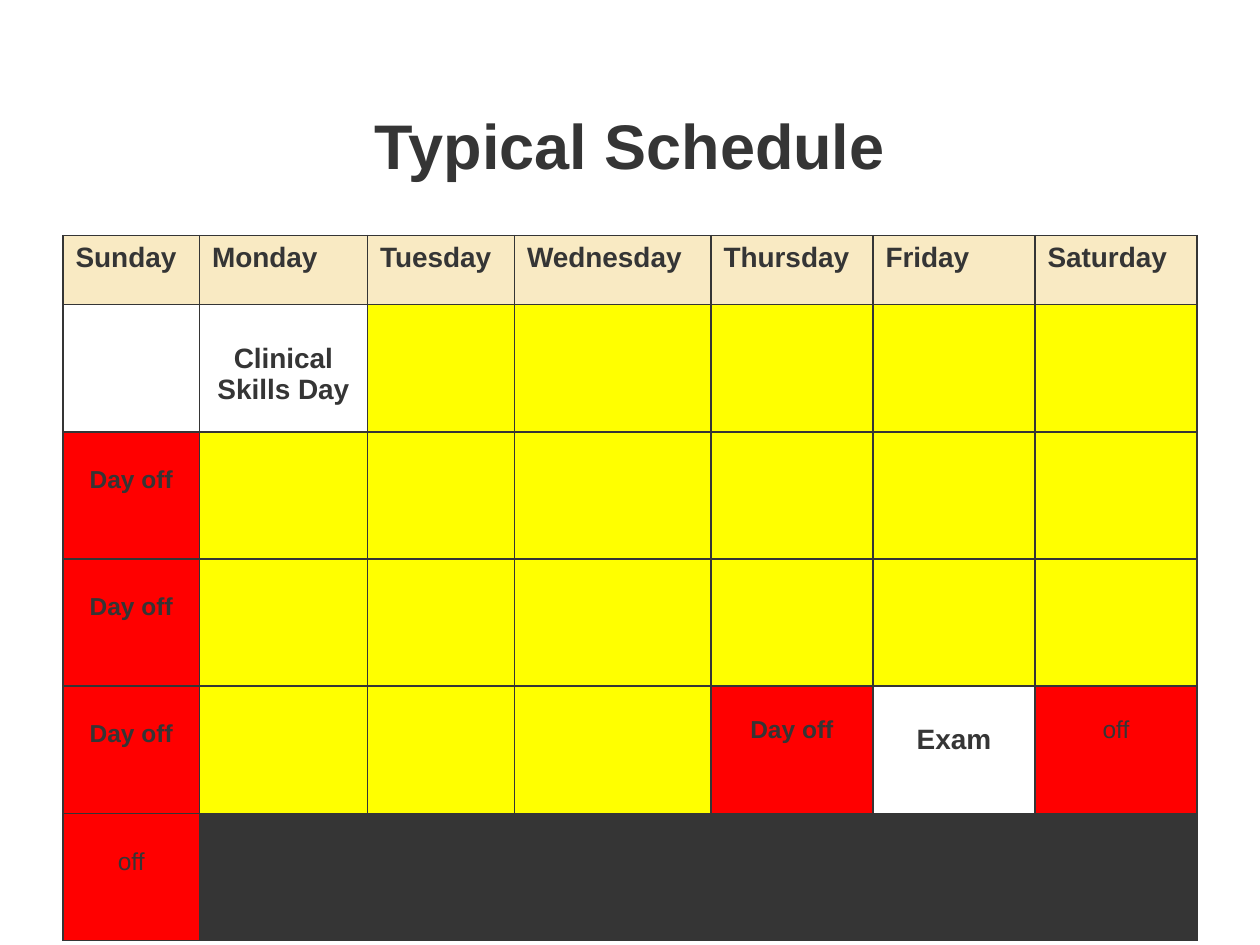
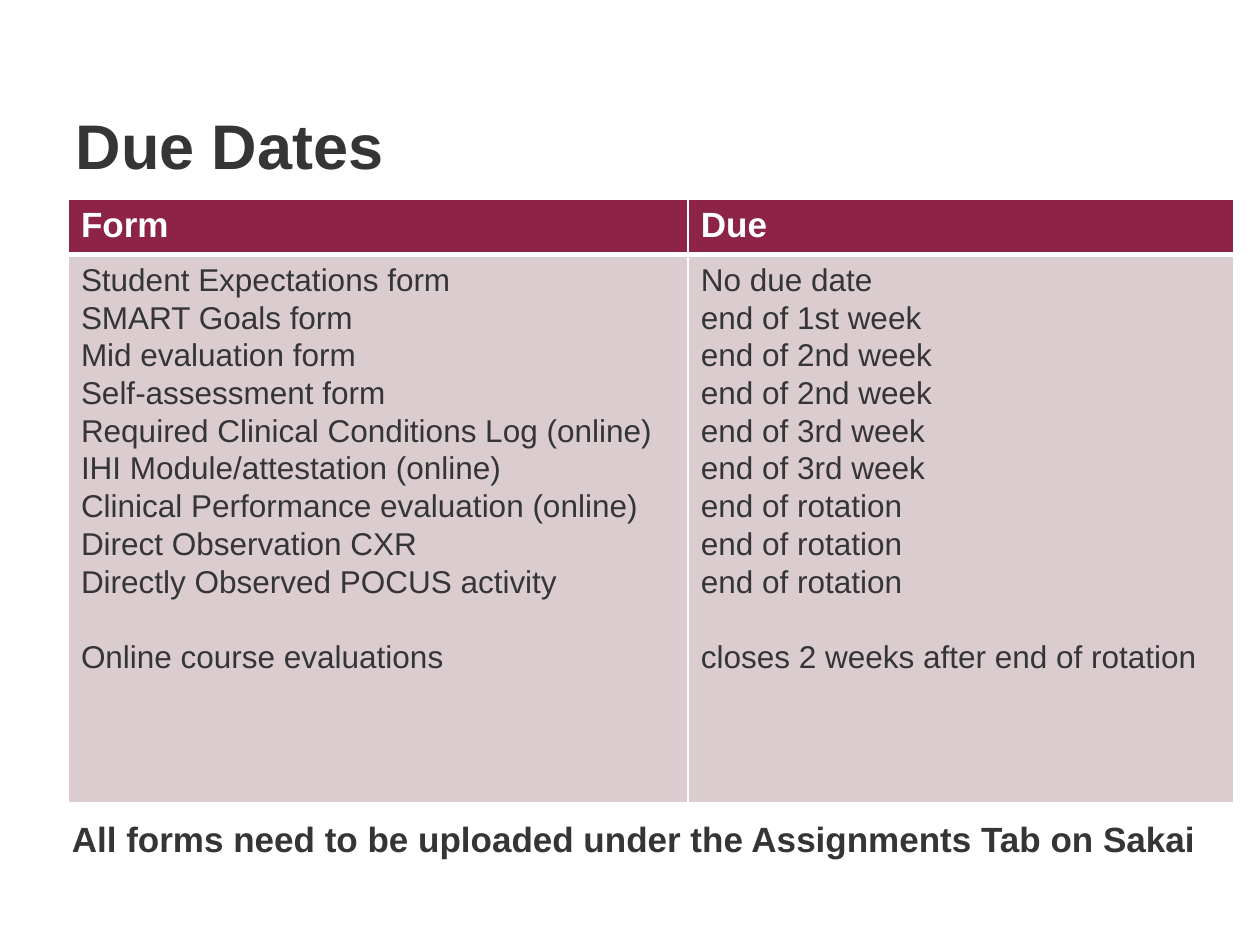
import pptx
import pptx.util
import pptx.dml.color
import pptx.enum.text
import pptx.oxml
import pptx.oxml.ns
from lxml import etree

Pt = pptx.util.Pt
ALIGN = pptx.enum.text.PP_ALIGN
ANCHOR = pptx.enum.text.MSO_ANCHOR

# Shared look
FONT = "Arial"
COLORS = {
    "ink": "353535", "white": "FFFFFF", "cream": "F9EAC3", "yellow": "FFFF00",
    "red": "FF0000", "wine": "8D2346", "rose": "DBCDCF",
}
TITLE_BOX = (36, 44.5, 648, 75.5)

# Schedule content
DAYS = {"Sunday": 78, "Monday": 96, "Tuesday": 84, "Wednesday": 112.3,
        "Thursday": 92.6, "Friday": 92.6, "Saturday": 92.6}
# kind: text, fill, size, bold, size of the line left free above the text
KINDS = {
    "blank": ("", "white", 16, True, 0),
    "skills": ("Clinical Skills Day", "white", 16, True, 16),
    "work": ("", "yellow", 14, True, 0),
    "day off": ("Day off", "red", 14, True, 14),
    "late off": ("Day off", "red", 14, True, 12),
    "exam": ("Exam", "white", 16, True, 16),
    "off": ("off", "red", 14, False, 12),
    "last off": ("off", "red", 14, False, 14),
    "closed": ("", "ink", 14, True, 0),
}
WEEKS = [
    ["blank", "skills"] + ["work"] * 5,
    ["day off"] + ["work"] * 6,
    ["day off"] + ["work"] * 6,
    ["day off"] + ["work"] * 3 + ["late off", "exam", "off"],
    ["last off"] + ["closed"] * 6,
]

# Due dates content
DUE_HEADER = ("Form", "Due")
DUE_DATES = [
    ("Student Expectations form", "No due date"),
    ("SMART Goals form", "end of 1st week"),
    ("Mid evaluation form", "end of 2nd week"),
    ("Self-assessment form", "end of 2nd week"),
    ("Required Clinical Conditions Log (online)", "end of 3rd week"),
    ("IHI Module/attestation (online)", "end of 3rd week"),
    ("Clinical Performance evaluation (online)", "end of rotation"),
    ("Direct Observation CXR", "end of rotation"),
    ("Directly Observed POCUS activity", "end of rotation"),
    ("Online course evaluations", "closes 2 weeks after end of rotation"),
]
UPLOAD_NOTE = "All forms need to be uploaded under the Assignments Tab on Sakai"


def rgb(name):
    return pptx.dml.color.RGBColor.from_string(COLORS[name])


def write(tf, lines, size, color="ink", bold=True, **para):
    """Fill a text frame, one paragraph per line."""
    for i, line in enumerate(lines):
        p = tf.paragraphs[0] if i == 0 else tf.add_paragraph()
        for key, value in para.items():
            setattr(p, key, value)
        look = {"name": FONT, "size": Pt(size), "bold": bold}
        target = p
        if line:
            target = p.add_run()
            target.text = line
        for key, value in look.items():
            setattr(target.font, key, value)
        target.font.color.rgb = rgb(color)


def add_slide(prs, title, align):
    s = prs.slides.add_slide(prs.slide_layouts[5])
    sp = s.shapes.title
    sp.left, sp.top, sp.width, sp.height = map(Pt, TITLE_BOX)
    sp.text_frame.vertical_anchor = ANCHOR.MIDDLE
    write(sp.text_frame, [title], 36, alignment=align)
    return s


def add_table(s, left, top, widths, heights):
    frame = s.shapes.add_table(len(heights), len(widths), Pt(left), Pt(top),
                               Pt(sum(widths)), Pt(sum(heights)))
    table = frame.table
    table.horz_banding = False
    for col, width in zip(table.columns, widths):
        col.width = Pt(width)
    for row, height in zip(table.rows, heights):
        row.height = Pt(height)
    return table


def paint(cell, fill, line, bottom=1):
    """Border all four sides, then fill the cell."""
    tc_pr = cell._tc.get_or_add_tcPr()
    for side in "LRTB":
        ln = etree.SubElement(tc_pr, pptx.oxml.ns.qn("a:ln" + side))
        ln.set("w", str(Pt(bottom if side == "B" else 1)))
        solid = etree.SubElement(ln, pptx.oxml.ns.qn("a:solidFill"))
        etree.SubElement(solid, pptx.oxml.ns.qn("a:srgbClr")).set("val", COLORS[line])
    cell.fill.solid()
    cell.fill.fore_color.rgb = rgb(fill)


def build_schedule(prs):
    s = add_slide(prs, "Typical Schedule", ALIGN.CENTER)
    table = add_table(s, 36, 134.6, list(DAYS.values()), [39.5] + [72.7] * len(WEEKS))
    for c, day in enumerate(DAYS):
        cell = table.cell(0, c)
        paint(cell, "cream", "ink")
        write(cell.text_frame, [day], 16)
    for r, week in enumerate(WEEKS, 1):
        for c, kind in enumerate(week):
            text, fill, size, bold, lead = KINDS[kind]
            cell = table.cell(r, c)
            paint(cell, fill, "ink")
            cell.margin_top = Pt(3.6 + 1.15 * lead)
            write(cell.text_frame, [text], size, bold=bold, alignment=ALIGN.CENTER)


def build_due_dates(prs):
    s = add_slide(prs, "Due Dates", ALIGN.LEFT)
    # Closing note
    sp = s.shapes.add_textbox(Pt(34), Pt(463.7), Pt(666), Pt(31.5))
    sp.text_frame.word_wrap = True
    write(sp.text_frame, [UPLOAD_NOTE], 20)
    # Forms and their dates
    table = add_table(s, 39.1, 114, [354.2, 311.5], [31, 313.5])
    for c, (head, lines) in enumerate(zip(DUE_HEADER, zip(*DUE_DATES))):
        cell = table.cell(0, c)
        paint(cell, "wine", "white", bottom=3)
        write(cell.text_frame, [head], 20, "white")
        cell = table.cell(1, c)
        paint(cell, "rose", "white")
        write(cell.text_frame, lines, 18, bold=False, line_spacing=1.07)
        cell.text_frame.paragraphs[-1].space_before = Pt(21.6)


def main():
    prs = pptx.Presentation()
    prs.slide_width, prs.slide_height = Pt(720), Pt(540)
    build_schedule(prs)
    build_due_dates(prs)
    prs.save("out.pptx")


if __name__ == "__main__":
    main()
